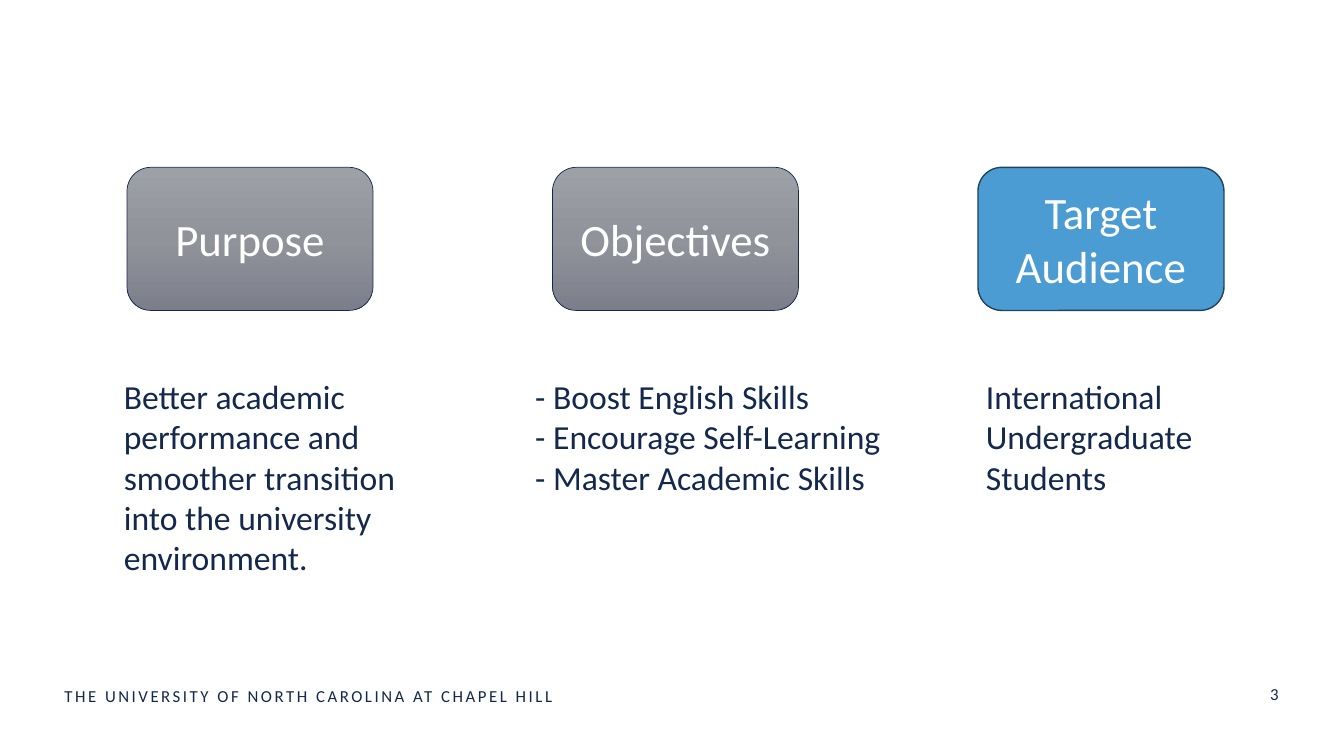
from copy import deepcopy
from dataclasses import dataclass

from pptx import Presentation, util as u
from pptx.dml.color import RGBColor
from pptx.enum import shapes, text


@dataclass(frozen=True)
class Theme:
    font: str = "Calibri"
    navy: str = "13284B"
    white: str = "FFFFFF"
    blue: str = "4B9CD3"
    blue_edge: str = "21445C"
    greys: tuple = ("9EA0A8", "91939B", "7C7F8B")
    heading: int = 32
    body: int = 24
    small: int = 12


THEME = Theme()
COLUMNS = [
    {"heading": ["Purpose"], "active": False, "body_box": (1.13, 2.91, 2.02),
     "body": ["Better academic performance and smoother transition",
              "into the university environment."]},
    {"heading": ["Objectives"], "active": False, "body_box": (5.21, 3.82, 1.26),
     "body": ["- Boost English Skills", "- Encourage Self-Learning", "- Master Academic Skills"]},
    {"heading": ["Target", "Audience"], "active": True, "body_box": (9.68, 2.46, 2.54),
     "body": ["International Undergraduate Students"]},
]
FOOTER = "THE UNIVERSITY OF NORTH CAROLINA AT CHAPEL HILL"
PAGE = "3"

SLIDE_W, SLIDE_H = 13.33, 7.5
CARD_LEFT, CARD_TOP, CARD_W, CARD_H = 1.26, 1.66, 2.44, 1.42
CARD_PITCH = 4.22
BODY_TOP, FOOTER_TOP = 3.68, 6.75


def color(value):
    return RGBColor.from_string(value)


def write(shape, lines, size, ink, align=text.PP_ALIGN.LEFT,
          anchor=text.MSO_ANCHOR.TOP, tracking=None):
    frame = shape.text_frame
    frame.word_wrap = True
    frame.vertical_anchor = anchor
    frame.text = "\n".join(lines)
    for paragraph in frame.paragraphs:
        paragraph.alignment = align
        for run in paragraph.runs:
            run.font.name = THEME.font
            run.font.size = u.Pt(size)
            run.font.color.rgb = color(ink)
            if tracking:
                run.font._element.set("spc", str(tracking))


def add_text(slide, box, lines, size, **style):
    label = slide.shapes.add_textbox(*map(u.Inches, box))
    write(label, lines, size, THEME.navy, **style)


def fill_grey(card):
    card.fill.gradient()
    card.fill.gradient_angle = 270
    stop_list = card.element.xpath(".//a:gsLst")[0]
    stop_list.insert(1, deepcopy(stop_list[0]))
    for stop, share, grey in zip(card.fill.gradient_stops, (0, 0.5, 1), THEME.greys):
        stop.position = share
        stop.color.rgb = color(grey)


def add_card(slide, index, column):
    box = (CARD_LEFT + index * CARD_PITCH, CARD_TOP, CARD_W, CARD_H)
    card = slide.shapes.add_shape(shapes.MSO_SHAPE.ROUNDED_RECTANGLE, *map(u.Inches, box))
    card.shadow.inherit = False
    if column["active"]:
        card.fill.solid()
        card.fill.fore_color.rgb = color(THEME.blue)
    else:
        fill_grey(card)
    card.line.color.rgb = color(THEME.blue_edge if column["active"] else THEME.navy)
    card.line.width = u.Pt(1 if column["active"] else 0.5)
    write(card, column["heading"], THEME.heading, THEME.white,
          text.PP_ALIGN.CENTER, text.MSO_ANCHOR.MIDDLE)


def main():
    deck = Presentation()
    deck.slide_width, deck.slide_height = u.Inches(SLIDE_W), u.Inches(SLIDE_H)
    slide = deck.slides.add_slide(deck.slide_layouts[6])
    for index, column in enumerate(COLUMNS):
        add_card(slide, index, column)
        left, width, height = column["body_box"]
        add_text(slide, (left, BODY_TOP, width, height), column["body"], THEME.body)
    add_text(slide, (0.54, FOOTER_TOP, 7.07, 0.3), [FOOTER], THEME.small, tracking=180)
    add_text(slide, (9.82, FOOTER_TOP, 2.96, 0.27), [PAGE], THEME.small,
             align=text.PP_ALIGN.RIGHT, anchor=text.MSO_ANCHOR.MIDDLE)
    deck.save("out.pptx")


if __name__ == "__main__":
    main()
